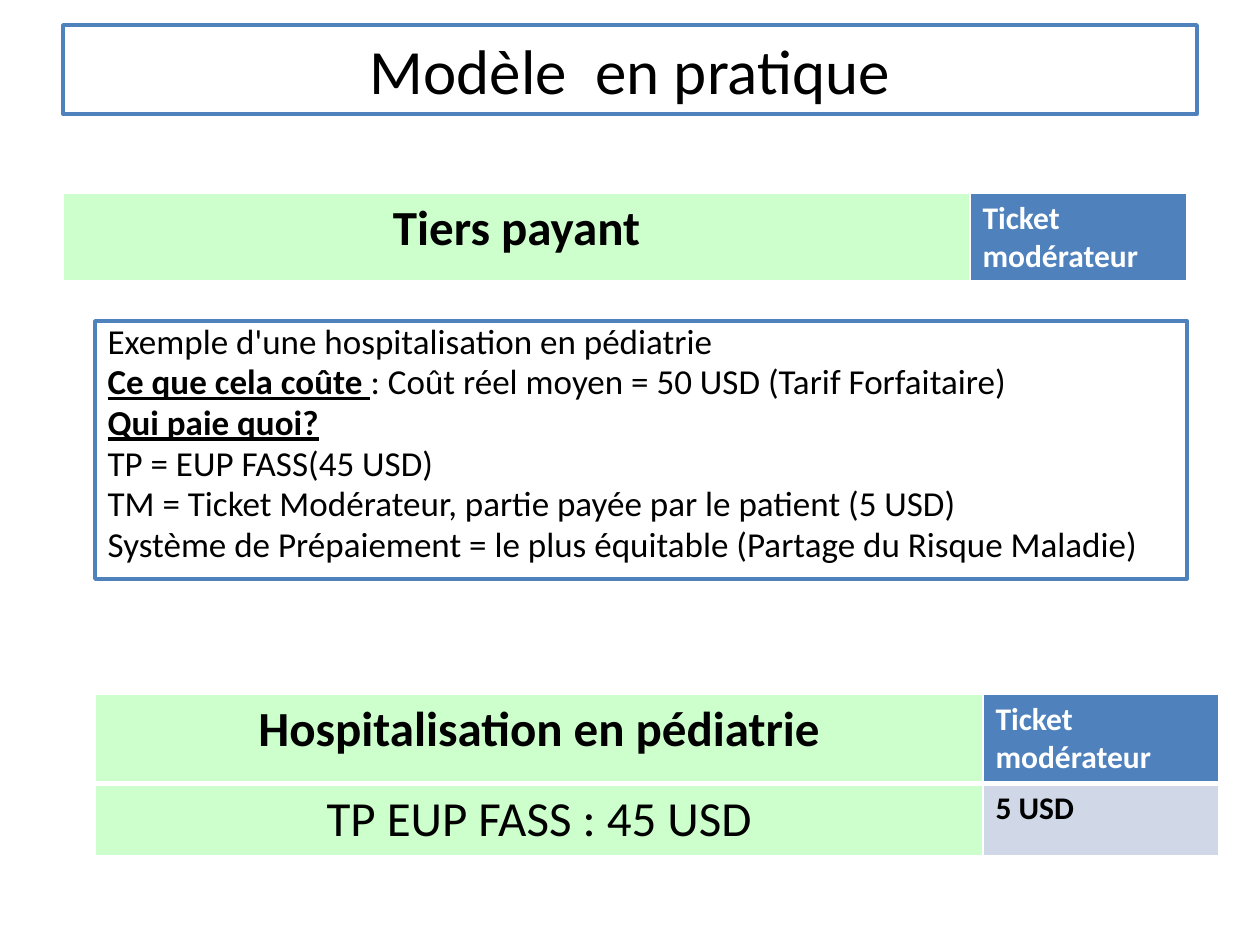
import dataclasses

import pptx
import pptx.dml.color
import pptx.enum.text
import pptx.oxml
import pptx.oxml.ns
import pptx.slide
import pptx.util

EMU_PER_PX = 914400 / 126
FONT = "Calibri"
COLORS = {
    "white": "FFFFFF",
    "black": "000000",
    "blue": "4F81BD",
    "pale blue": "D0D8E8",
    "green": "CCFFCC",
}
CENTER = pptx.enum.text.PP_ALIGN.CENTER


@dataclasses.dataclass(frozen=True)
class Box:
    left: int
    top: int
    width: int
    height: int


@dataclasses.dataclass(frozen=True)
class Cell:
    text: str
    fill: str
    color: str = "black"
    size: int = 28
    bold: bool = True
    centered: bool = True


@dataclasses.dataclass(frozen=True)
class Grid:
    left: int
    top: int
    columns: tuple[int, ...]
    rows: tuple[int, ...]
    cells: tuple[tuple[Cell, ...], ...]


def px(length: int) -> int:
    return round(length * EMU_PER_PX)


def rgb(name: str) -> pptx.dml.color.RGBColor:
    return pptx.dml.color.RGBColor.from_string(COLORS[name])


def style_run(run, size: int, color: str = "black", bold: bool = False,
              underline: bool = False) -> None:
    run.font.name = FONT
    run.font.size = pptx.util.Pt(size)
    run.font.color.rgb = rgb(color)
    run.font.bold = bold
    run.font.underline = underline


def frame_placeholder(holder, box: Box) -> None:
    """Move a placeholder and give it the white fill and blue outline."""
    holder.left, holder.top = px(box.left), px(box.top)
    holder.width, holder.height = px(box.width), px(box.height)
    holder.fill.solid()
    holder.fill.fore_color.rgb = rgb("white")
    holder.line.color.rgb = rgb("blue")
    holder.line.width = pptx.util.Pt(2)
    holder.text_frame.word_wrap = True
    holder.text_frame.auto_size = pptx.enum.text.MSO_AUTO_SIZE.NONE


def remove_bullet(paragraph) -> None:
    properties = paragraph._p.get_or_add_pPr()
    properties.set("marL", "0")
    properties.set("indent", "0")
    properties.append(pptx.oxml.parse_xml(
        f'<a:buNone {pptx.oxml.ns.nsdecls("a")}/>'))


def set_borders(cell, top: int, bottom: int) -> None:
    """Draw white cell borders: 1 pt at the sides, given widths elsewhere."""
    properties = cell._tc.get_or_add_tcPr()
    sides = {"lnL": 1, "lnR": 1, "lnT": top, "lnB": bottom}
    for position, (side, width) in enumerate(sides.items()):
        properties.insert(position, pptx.oxml.parse_xml(
            f'<a:{side} {pptx.oxml.ns.nsdecls("a")} w="{pptx.util.Pt(width)}">'
            f'<a:solidFill><a:srgbClr val="{COLORS["white"]}"/></a:solidFill>'
            f'</a:{side}>'))


def draw_grid(slide: pptx.slide.Slide, grid: Grid) -> None:
    table = slide.shapes.add_table(
        len(grid.rows), len(grid.columns), px(grid.left), px(grid.top),
        px(sum(grid.columns)), px(sum(grid.rows))).table
    for column, width in zip(table.columns, grid.columns):
        column.width = px(width)
    for index, (row, height) in enumerate(zip(table.rows, grid.rows)):
        row.height = px(height)
        for cell, content in zip(row.cells, grid.cells[index]):
            cell.fill.solid()
            cell.fill.fore_color.rgb = rgb(content.fill)
            # The header row is ruled off with a thicker line
            set_borders(cell, top=3 if index else 1, bottom=1 if index else 3)
            cell.text_frame.text = content.text
            paragraph = cell.text_frame.paragraphs[0]
            if content.centered:
                paragraph.alignment = CENTER
            style_run(paragraph.runs[0], content.size, content.color, content.bold)


COPAY_HEADER = Cell("Ticket modérateur", "blue", "white", 18, centered=False)
GRIDS = (
    Grid(63, 193, (907, 217), (88,),
         ((Cell("Tiers payant", "green"), COPAY_HEADER),)),
    Grid(95, 694, (888, 236), (88, 72), (
        (Cell("Hospitalisation en pédiatrie", "green"), COPAY_HEADER),
        (Cell("TP EUP FASS : 45 USD", "green", bold=False),
         Cell("5 USD", "pale blue", size=18, centered=False)),
    )),
)
# Each line: emphasised lead, then plain text
EXAMPLE_LINES = (
    ("", "Exemple d'une hospitalisation en pédiatrie"),
    ("Ce que cela coûte ", ": Coût réel moyen = 50 USD (Tarif Forfaitaire)"),
    ("Qui paie quoi?", ""),
    ("", "TP = EUP FASS(45 USD)"),
    ("", "TM = Ticket Modérateur, partie payée par le patient (5 USD)"),
    ("", "Système de Prépaiement = le plus équitable (Partage du Risque Maladie)"),
)


def main() -> None:
    deck = pptx.Presentation()
    deck.slide_width, deck.slide_height = px(1260), px(945)
    slide = deck.slides.add_slide(deck.slide_layouts[1])

    # Title
    title = slide.shapes.title
    frame_placeholder(title, Box(63, 25, 1134, 89))
    title.text_frame.vertical_anchor = pptx.enum.text.MSO_ANCHOR.MIDDLE
    title.text_frame.text = "Modèle  en pratique"
    title.text_frame.paragraphs[0].alignment = CENTER
    style_run(title.text_frame.paragraphs[0].runs[0], 36)

    # Worked example
    example = slide.placeholders[1]
    frame_placeholder(example, Box(95, 321, 1092, 258))
    example.text_frame.text = "\n".join(lead or rest for lead, rest in EXAMPLE_LINES)
    for paragraph, (lead, rest) in zip(example.text_frame.paragraphs, EXAMPLE_LINES):
        paragraph.line_spacing = 0.8
        remove_bullet(paragraph)
        style_run(paragraph.runs[0], 20, bold=bool(lead), underline=bool(lead))
        if lead and rest:
            plain = paragraph.add_run()
            plain.text = rest
            style_run(plain, 20)

    # Cost-sharing tables
    for grid in GRIDS:
        draw_grid(slide, grid)

    deck.save("out.pptx")


if __name__ == "__main__":
    main()
